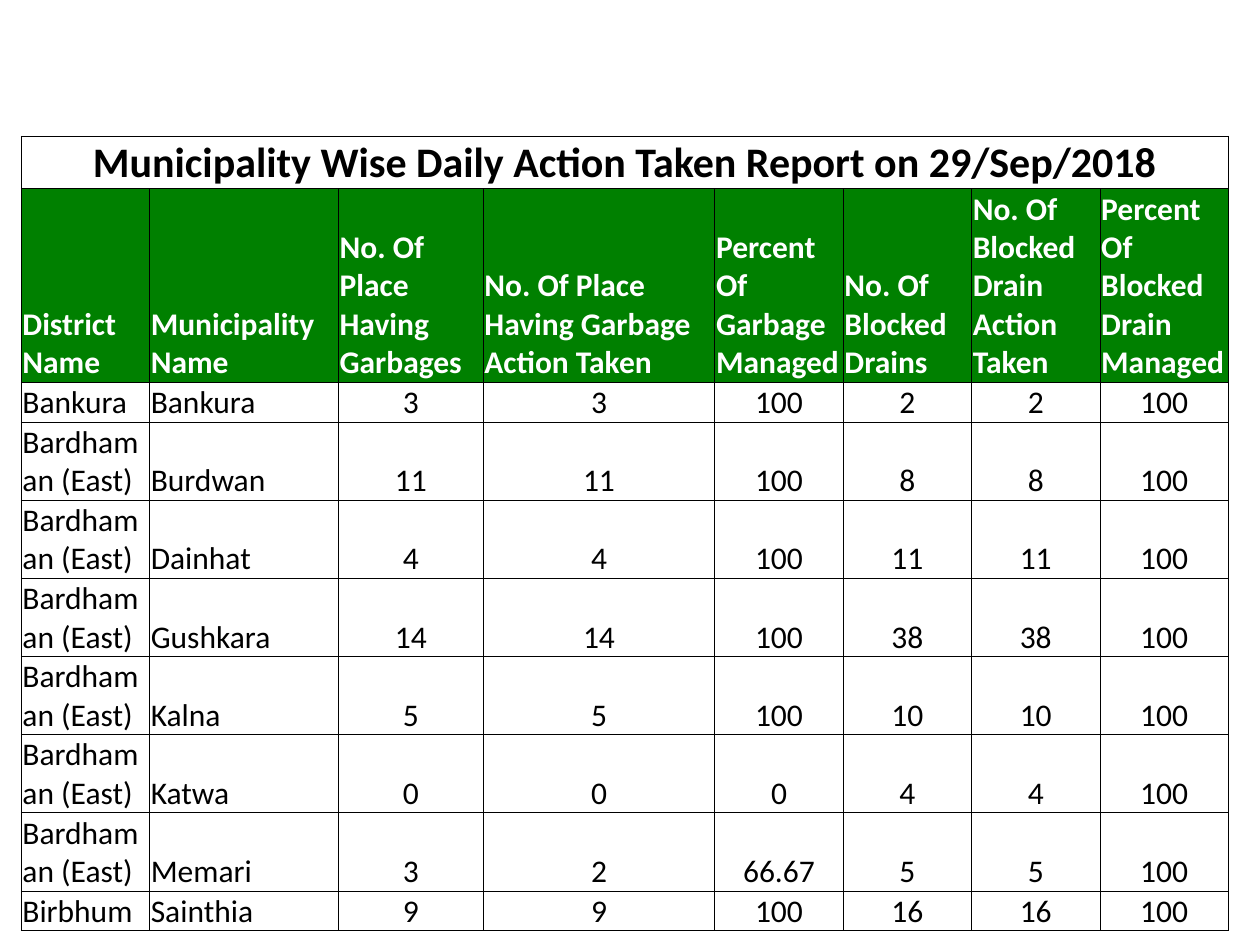
from lxml import etree
from pptx import Presentation
from pptx.dml.color import RGBColor
from pptx.enum.text import MSO_ANCHOR, PP_ALIGN
from pptx.oxml.ns import qn
from pptx.util import Pt

LEFT, CENTER = PP_ALIGN.LEFT, PP_ALIGN.CENTER
MIDDLE, BOTTOM = MSO_ANCHOR.MIDDLE, MSO_ANCHOR.BOTTOM
BLACK, WHITE, GREEN = "000000", "FFFFFF", "008000"

TITLE = "Municipality Wise Daily Action Taken Report on 29/Sep/2018"
HEADS = [
    "District Name", "Municipality Name", "No. Of Place Having Garbages",
    "No. Of Place Having Garbage Action Taken", "Percent Of Garbage Managed",
    "No. Of Blocked Drains", "No. Of Blocked Drain Action Taken",
    "Percent Of Blocked Drain Managed",
]
EAST = "Bardhaman (East)"
TOWNS = [
    ("Bankura", "Bankura", 3, 3, 100, 2, 2, 100),
    (EAST, "Burdwan", 11, 11, 100, 8, 8, 100),
    (EAST, "Dainhat", 4, 4, 100, 11, 11, 100),
    (EAST, "Gushkara", 14, 14, 100, 38, 38, 100),
    (EAST, "Kalna", 5, 5, 100, 10, 10, 100),
    (EAST, "Katwa", 0, 0, 0, 4, 4, 100),
    (EAST, "Memari", 3, 2, 66.67, 5, 5, 100),
    ("Birbhum", "Sainthia", 9, 9, 100, 16, 16, 100),
]
SHARES = [1.02, 1.5, 1.15, 1.84, 1.02, 1.02, 1.02, 1.02]


def color(value):
    return RGBColor.from_string(value)


def add_border(cell):
    props = cell._tc.get_or_add_tcPr()
    for side in ("lnL", "lnR", "lnT", "lnB"):
        line = etree.SubElement(props, qn("a:" + side), w=str(Pt(0.5)))
        fill = etree.SubElement(line, qn("a:solidFill"))
        etree.SubElement(fill, qn("a:srgbClr"), val=BLACK)


def fill_cell(cell, text, ink=BLACK, fill=WHITE, size=18, bold=False,
              align=LEFT, anchor=BOTTOM):
    cell.margin_left = cell.margin_right = cell.margin_top = Pt(0.72)
    cell.margin_bottom = 0
    cell.vertical_anchor = anchor
    cell.fill.solid()
    cell.fill.fore_color.rgb = color(fill)
    para = cell.text_frame.paragraphs[0]
    para.alignment = align
    run = para.add_run()
    run.text = text
    font = run.font
    font.name, font.size, font.bold = "Calibri", Pt(size), bold
    font.color.rgb = color(ink)


def add_report(slide, left, top, width, height):
    frame = slide.shapes.add_table(len(TOWNS) + 2, len(HEADS), Pt(left),
                                   Pt(top), Pt(width), Pt(height))
    table = frame.table
    table.first_row = table.horz_banding = False
    for col, share in zip(table.columns, SHARES):
        col.width = Pt(width * share / sum(SHARES))
    tall = [30, 110] + [44 if town[0] == EAST else 22 for town in TOWNS]
    for row, size in zip(table.rows, tall):
        row.height = Pt(size * height / sum(tall))
    for cell in table.iter_cells():
        add_border(cell)

    table.cell(0, 0).merge(table.cell(0, len(HEADS) - 1))
    fill_cell(table.cell(0, 0), TITLE, size=24, bold=True,
              align=CENTER, anchor=MIDDLE)
    for col, head in enumerate(HEADS):
        fill_cell(table.cell(1, col), head, WHITE, GREEN, bold=True)
    for row, town in enumerate(TOWNS, 2):
        for col, value in enumerate(town):
            fill_cell(table.cell(row, col), str(value),
                      align=LEFT if col < 2 else CENTER)


def main():
    deck = Presentation()
    deck.slide_width, deck.slide_height = Pt(720), Pt(540)
    slide = deck.slides.add_slide(deck.slide_layouts[6])
    add_report(slide, 12.1, 77.8, 690, 446.4)
    deck.save("out.pptx")


if __name__ == "__main__":
    main()
